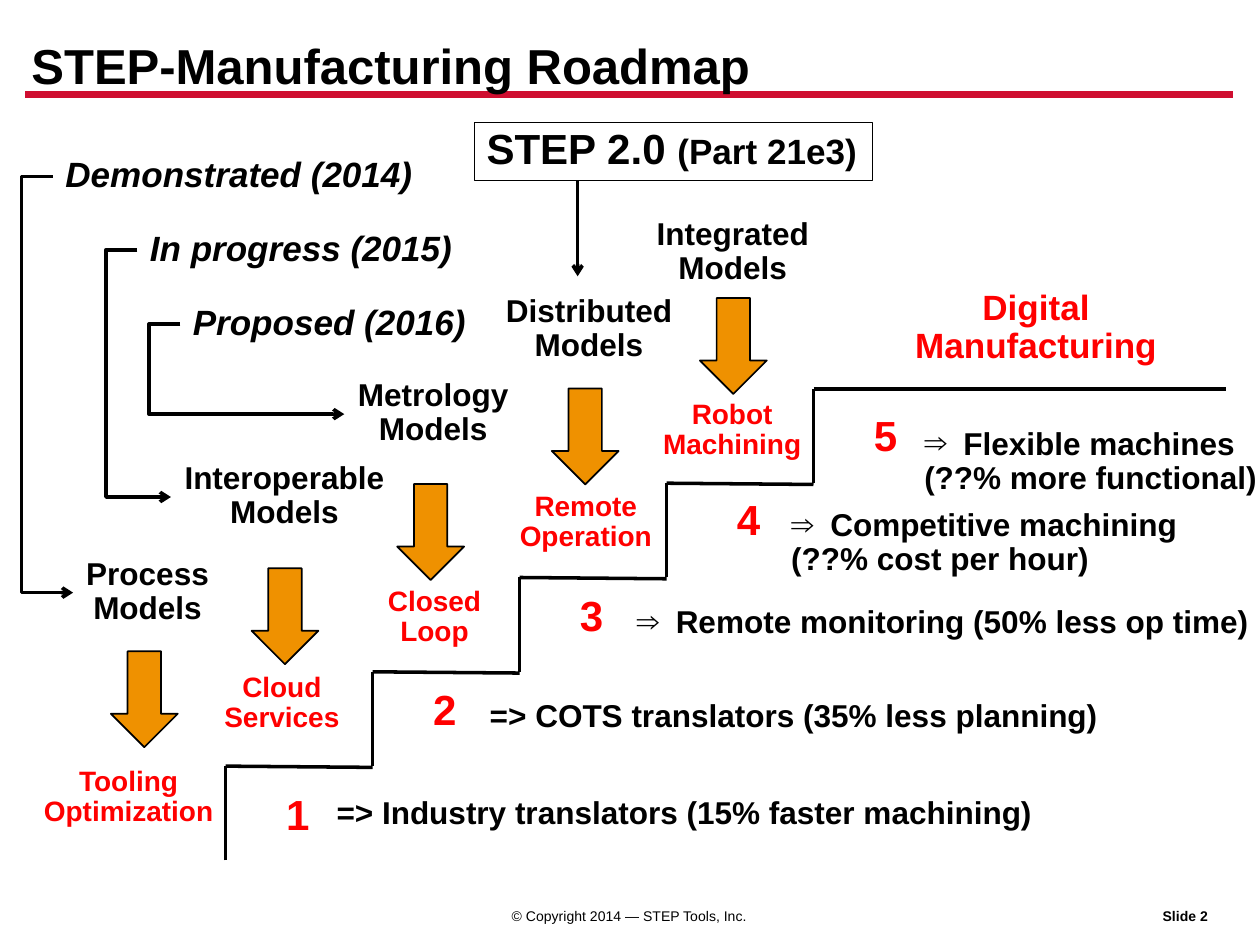
import pptx
import pptx.util
import pptx.dml.color
import pptx.enum.dml
import pptx.enum.shapes
import pptx.enum.text
import pptx.oxml
import pptx.oxml.ns

Inches = pptx.util.Inches
ALIGN = pptx.enum.text.PP_ALIGN
CONNECTOR = pptx.enum.shapes.MSO_CONNECTOR
BLACK, RED, ORANGE, CRIMSON = "000000", "FF0000", "EF9100", "CF0E30"

NUMBER = {"size": 24, "color": RED, "bold": True}
GAIN = {"size": 16, "color": RED, "bold": True}
MODEL = {"size": 18, "bold": True}
PHASE = {"size": 20, "bold": True, "italic": True}
FOOTER = {"size": 8}

STEP_WIDTH, STEP_HEIGHT = 1.165, 0.7475
STAIR_BOX = (1.79, 3.08, 7.93, 3.74)

# Text with (left, top, width) offsets from the upper corner of each step
STEPS = [
    {"number": (0.38, 0.17), "arrow": (-0.91, -0.91),
     "model": ("Process", -1.21, -1.7, 1.18),
     "gain": (["Tooling", "Optimization"], -1.55, -0.04, 1.56),
     "outcome": (["=> Industry translators (15% faster machining)"], 0.78, 0.2, 5.77)},
    {"number": (0.38, 0.09), "arrow": (-0.96, -0.82),
     "model": ("Interoperable", -1.6, -1.71, 1.8),
     "gain": (["Cloud", "Services"], -1.28, -0.04, 1.12),
     "outcome": (["=> COTS translators (35% less planning)"], 0.83, 0.18, 5.07)},
    {"number": (0.38, 0.09), "arrow": (-0.97, -0.74),
     "model": ("Metrology", -1.39, -1.62, 1.41),
     "gain": (["Closed", "Loop"], -1.15, 0.03, 0.95),
     "outcome": (["Remote monitoring (50% less op time)"], 0.83, 0.18, 5.1)},
    {"number": (0.46, 0.08), "arrow": (-0.91, -0.75),
     "model": ("Distributed", -1.38, -1.54, 1.53),
     "gain": (["Remote", "Operation"], -1.27, 0.02, 1.26),
     "outcome": (["Competitive machining", "(??% cost per hour)"], 0.89, 0.16, 3.36)},
    {"number": (0.38, 0.16), "arrow": (-0.9, -0.72),
     "model": ("Integrated", -1.35, -1.4, 1.42),
     "gain": (["Robot", "Machining"], -1.3, 0.04, 1.31),
     "outcome": (["Flexible machines", "(??% more functional)"], 0.78, 0.26, 3.01)},
]

# Each phase points at the model of the step with the same index
PHASES = [
    ("Demonstrated (2014)", (0.42, 1.2, 2.98, 0.4)),
    ("In progress (2015)", (1.09, 1.78, 2.62, 0.4)),
    ("Proposed (2016)", (1.43, 2.37, 2.38, 0.4)),
]


def rgb(value):
    return pptx.dml.color.RGBColor.from_string(value)


def add_element(parent, tag, **attributes):
    child = pptx.oxml.ns.qn(tag)
    element = parent.makeelement(child, attributes)
    parent.append(element)
    return element


def style(font, look):
    values = {"name": "Arial", **look}
    values["size"] = pptx.util.Pt(values["size"])
    font.color.rgb = rgb(values.pop("color", BLACK))
    for name, value in values.items():
        setattr(font, name, value)


def add_text(page, box, lines, look, align=ALIGN.LEFT, bullet=False, margins=(0.1, 0.05)):
    """Add one paragraph per line; a bullet marks only the first."""
    shape = page.shapes.add_textbox(*map(Inches, box))
    frame = shape.text_frame
    across, down = map(Inches, margins)
    settings = {"word_wrap": False, "auto_size": pptx.enum.text.MSO_AUTO_SIZE.SHAPE_TO_FIT_TEXT,
                "margin_left": across, "margin_right": across,
                "margin_top": down, "margin_bottom": down}
    for name, value in settings.items():
        setattr(frame, name, value)
    for index, line in enumerate(lines):
        para = frame.add_paragraph() if index else frame.paragraphs[0]
        para.alignment = align
        para.line_spacing = 0.9
        if bullet and index == 0:
            properties = para._p.get_or_add_pPr()
            properties.set("marL", str(Inches(0.31)))
            properties.set("indent", str(-Inches(0.31)))
            add_element(properties, "a:buFont", typeface="Arial")
            add_element(properties, "a:buChar", char="⇒")
        span = para.add_run()
        span.text = line
        style(span.font, look)
    return shape


def add_line(page, start, end, width=2, color=BLACK, kind=CONNECTOR.STRAIGHT, arrow=False):
    line = page.shapes.add_connector(kind, *map(Inches, (*start, *end)))
    line.line.width = pptx.util.Pt(width)
    line.line.color.rgb = rgb(color)
    if arrow:
        add_element(line.line._get_or_add_ln(), "a:tailEnd", type="arrow")
    add_element(line._element.spPr, "a:effectLst")
    return line


def add_frame(page, box):
    """Add the title, the rule below it and the footer."""
    left, top, width, height = box
    add_line(page, (left + 0.2, top + 0.75), (left + width - 0.21, top + 0.75), 4, CRIMSON)
    add_text(page, (left + 0.25, top + 0.33, 5.77, 0.42), ["STEP-Manufacturing Roadmap"],
             {"size": 28, "bold": True}, margins=(0, 0))
    footer_top = top + height - 0.33
    add_text(page, (left + 3.94, footer_top, 2.1, 0.22),
             ["© Copyright 2014 — STEP Tools, Inc."], FOOTER, ALIGN.CENTER)
    add_text(page, (left + 9.12, footer_top, 0.63, 0.22), ["Slide 2"], {**FOOTER, "bold": True})


def add_step(page, corner, step):
    """Add the parts around one step and return its model label."""
    def place(offset_x, offset_y, width, height):
        return corner[0] + offset_x, corner[1] + offset_y, width, height

    number = str(STEPS.index(step) + 1)
    add_text(page, place(*step["number"], 0.39, 0.46), [number], NUMBER)
    gain, *spot = step["gain"]
    add_text(page, place(*spot, 0.59), gain, GAIN, ALIGN.CENTER)
    outcome, *spot = step["outcome"]
    add_text(page, place(*spot, 0.37 if len(outcome) == 1 else 0.65), outcome, MODEL,
             bullet=not outcome[0].startswith("=>"))
    arrow = page.shapes.add_shape(pptx.enum.shapes.MSO_SHAPE.DOWN_ARROW,
                                  *map(Inches, place(*step["arrow"], 0.53, 0.76)))
    arrow.shadow.inherit = False
    arrow.fill.solid()
    arrow.fill.fore_color.rgb = rgb(ORANGE)
    arrow.line.color.rgb = rgb(BLACK)
    arrow.line.width = pptx.util.Pt(1)
    model, *spot = step["model"]
    return add_text(page, place(*spot, 0.65), [model, "Models"], MODEL, ALIGN.CENTER)


def add_stairs(page, box):
    """Add the staircase with all its steps and return the model labels."""
    left, top, width, height = box
    models = []
    for index, step in enumerate(STEPS):
        x = left + index * STEP_WIDTH
        y = top + height - (index + 1) * STEP_HEIGHT
        is_last = index == len(STEPS) - 1
        tread_end = (left + width, y) if is_last else (x + STEP_WIDTH, y + 0.01)
        add_line(page, (x, y + STEP_HEIGHT), (x, y))
        add_line(page, (x, y), tread_end)
        models.append(add_step(page, (x, y), step))
    add_text(page, (left + 5.36, top - 0.83, 2.13, 0.71), ["Digital", "Manufacturing"],
             {"size": 20, "color": RED, "bold": True}, ALIGN.CENTER)
    return models


def add_phase(page, box, name, model):
    """Add a phase label and the bent arrow from it to a model."""
    label = add_text(page, box, [name], PHASE)
    arrow = add_line(page, (0, 0), (1, 1), kind=CONNECTOR.ELBOW, arrow=True)
    arrow.begin_connect(label, 1)
    arrow.end_connect(model, 1)
    bend = -Inches(0.25) / (model.left - label.left)
    guides = arrow._element.spPr.prstGeom.get_or_add_avLst()
    add_element(guides, "a:gd", name="adj1", fmla=f"val {round(bend * 100000)}")


def add_standard(page, box):
    """Add the framed name of the standard and the arrow below it."""
    left, top, width, height = box
    label = add_text(page, box, ["STEP 2.0 "], {"size": 24, "bold": True})
    label.line.color.rgb = rgb(BLACK)
    label.line.width = pptx.util.Pt(0.75)
    span = label.text_frame.paragraphs[0].add_run()
    span.text = "(Part 21e3)"
    style(span.font, {"size": 20, "bold": True})
    bottom = top + height
    add_line(page, (left + 0.82, bottom), (left + 0.82, bottom + 0.76), arrow=True)


def main():
    deck = pptx.Presentation()
    deck.slide_width, deck.slide_height = Inches(9.99), Inches(7.49)
    page = deck.slides.add_slide(deck.slide_layouts[6])
    add_frame(page, (0, 0, 9.99, 7.49))
    models = add_stairs(page, STAIR_BOX)
    for (name, box), model in zip(PHASES, models):
        add_phase(page, box, name, model)
    add_standard(page, (3.76, 0.97, 3.16, 0.46))
    deck.save("out.pptx")


if __name__ == "__main__":
    main()
